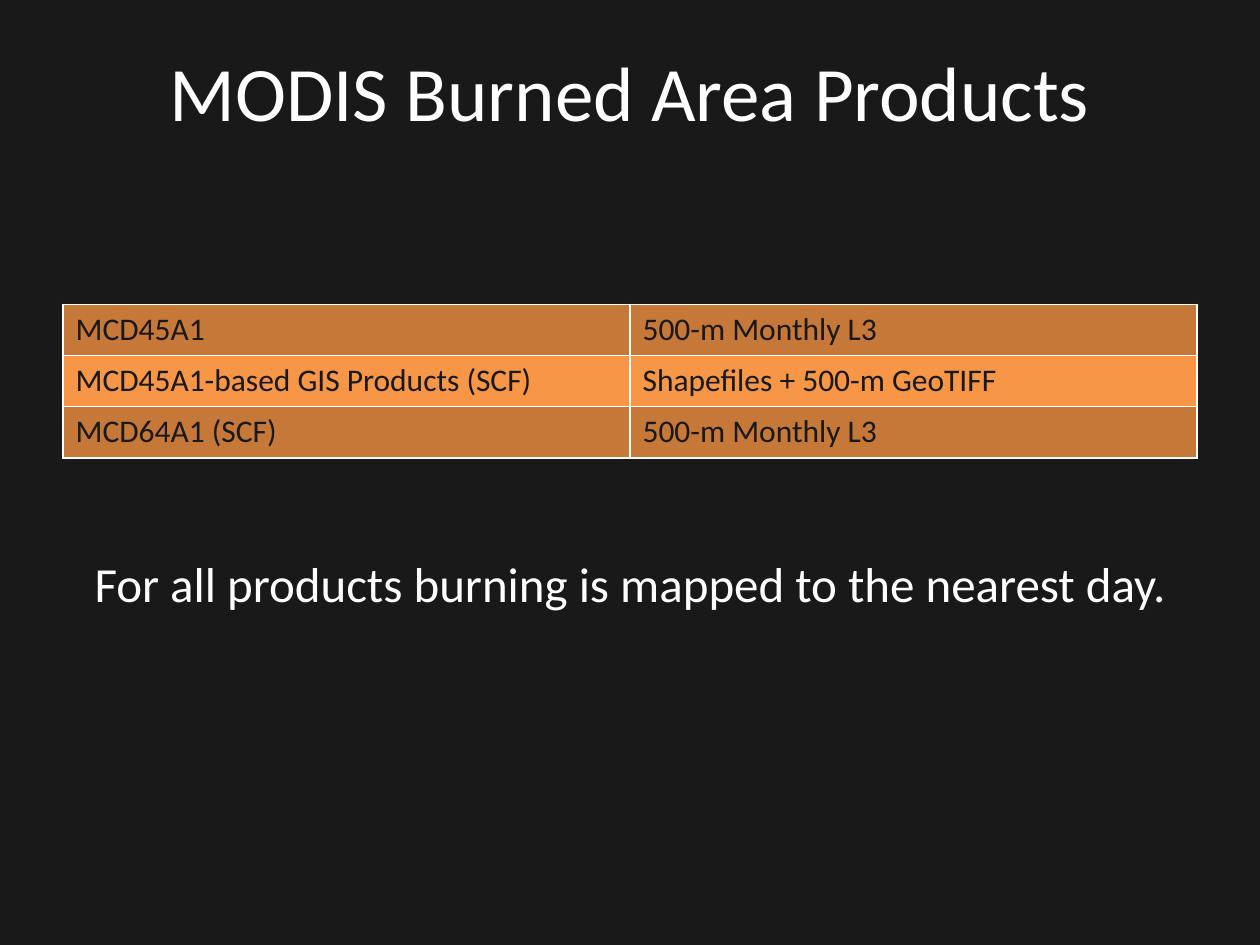
from pptx import Presentation
from pptx.dml.color import RGBColor
from pptx.enum.text import MSO_ANCHOR, PP_ALIGN
from pptx.util import Pt

BACKGROUND = RGBColor(0x19, 0x19, 0x19)
WHITE = RGBColor(0xFF, 0xFF, 0xFF)
BAND_COLORS = (RGBColor(0xC6, 0x78, 0x38), RGBColor(0xF7, 0x96, 0x46))

PRODUCTS = (
    ("MCD45A1", "500-m Monthly L3"),
    ("MCD45A1-based GIS Products (SCF)", "Shapefiles + 500-m GeoTIFF"),
    ("MCD64A1 (SCF)", "500-m Monthly L3"),
)


def write_line(frame, wording, size, color, align):
    frame.word_wrap = True
    frame.vertical_anchor = MSO_ANCHOR.TOP
    line = frame.paragraphs[0]
    line.alignment = align
    run = line.add_run()
    run.text = wording
    font_format = {"name": "Calibri", "size": Pt(size), "bold": False}
    for attribute, value in font_format.items():
        setattr(run.font, attribute, value)
    run.font.color.rgb = color


def place_title(slide, left, top, width, height):
    title = slide.shapes.title
    box = {"left": left, "top": top, "width": width, "height": height}
    for side, length in box.items():
        setattr(title, side, length)
    write_line(title.text_frame, "MODIS Burned Area Products", 44, WHITE, PP_ALIGN.CENTER)


def place_products(slide, left, top, width, height):
    products = slide.shapes.add_table(
        len(PRODUCTS), len(PRODUCTS[0]), left, top, width, height
    ).table
    products.first_row = False
    for row, entries in enumerate(PRODUCTS):
        for column, entry in enumerate(entries):
            cell = products.cell(row, column)
            cell.fill.solid()
            cell.fill.fore_color.rgb = BAND_COLORS[row % 2]
            write_line(cell.text_frame, entry, 18, BACKGROUND, PP_ALIGN.LEFT)


def place_note(slide, left, top, width, height):
    note = slide.shapes.add_textbox(left, top, width, height)
    write_line(
        note.text_frame,
        "For all products burning is mapped to the nearest day.",
        28, WHITE, PP_ALIGN.CENTER,
    )


def main():
    deck = Presentation()
    deck.slide_width, deck.slide_height = Pt(720), Pt(540)
    slide = deck.slides.add_slide(deck.slide_layouts[5])
    slide.background.fill.solid()
    slide.background.fill.fore_color.rgb = BACKGROUND
    place_title(slide, Pt(24), Pt(21.6), Pt(672), Pt(90))
    place_products(slide, Pt(36), Pt(174), Pt(648), Pt(87.6))
    place_note(slide, Pt(36), Pt(312.5), Pt(648), Pt(41))
    deck.save("out.pptx")


if __name__ == "__main__":
    main()
